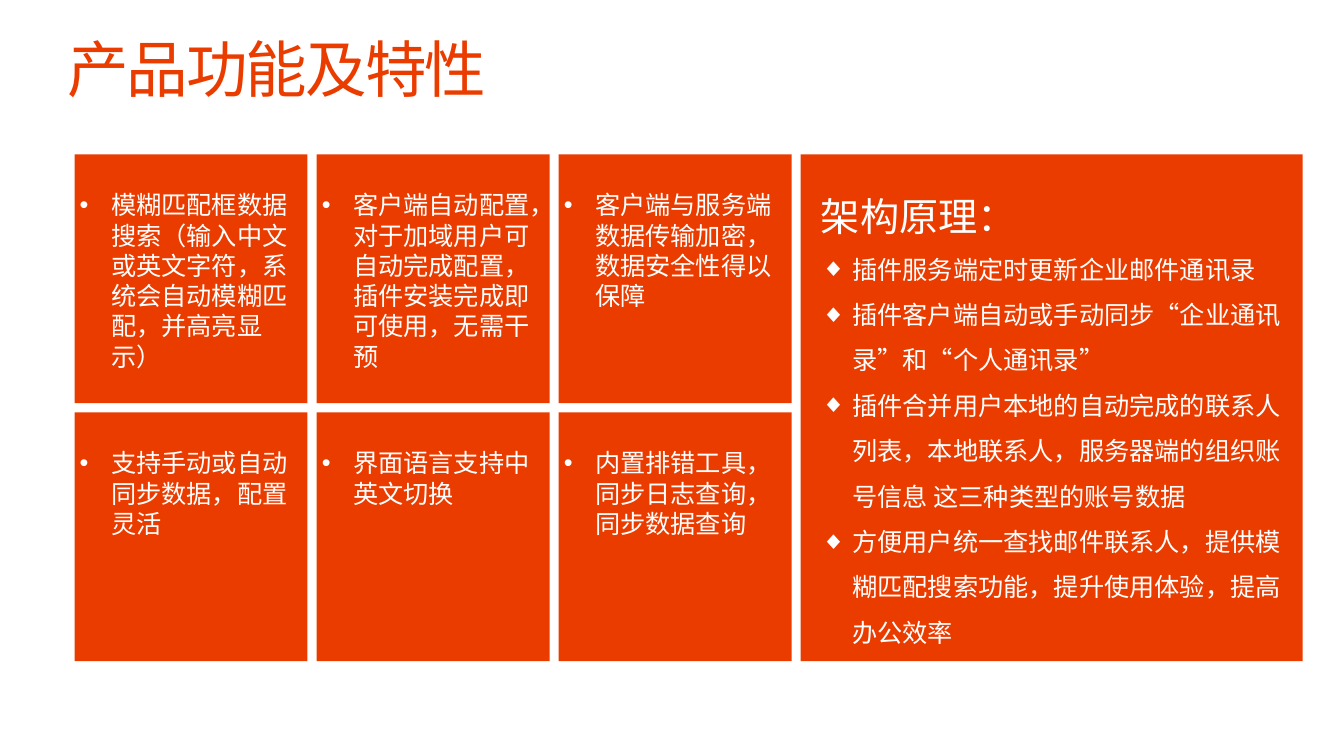
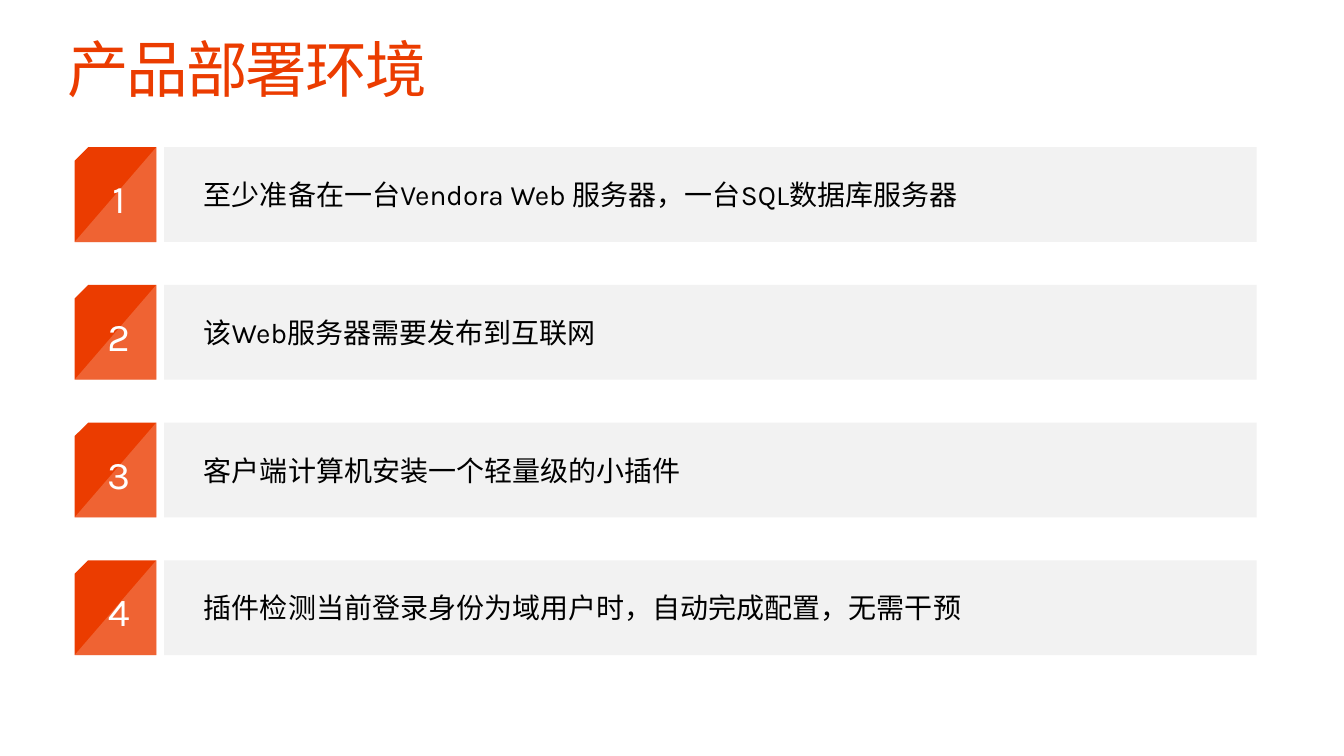
from lxml import etree
from pptx import Presentation
from pptx import util as u
from pptx.dml.color import RGBColor
from pptx.enum import shapes, text
from pptx.oxml.ns import qn

FONT = "Karla"
COLORS = {"accent": "EB3C00", "bar": "F2F2F2", "white": "FFFFFF", "black": "000000"}

FEATURES_TITLE = ("产品功能及特性", 11.73)
FEATURES = [
    "模糊匹配框数据搜索（输入中文或英文字符，系统会自动模糊匹配，并高亮显示）",
    "客户端自动配置，对于加域用户可自动完成配置，插件安装完成即可使用，无需干预",
    "客户端与服务端数据传输加密，数据安全性得以保障",
    "支持手动或自动同步数据，配置灵活",
    "界面语言支持中英文切换",
    "内置排错工具，同步日志查询，同步数据查询",
]
PRINCIPLE_HEADING = "架构原理："
PRINCIPLES = [
    "插件服务端定时更新企业邮件通讯录",
    "插件客户端自动或手动同步“企业通讯录”和“个人通讯录”",
    "插件合并用户本地的自动完成的联系人列表，本地联系人，服务器端的组织账号信息 这三种类型的账号数据",
    "方便用户统一查找邮件联系人，提供模糊匹配搜索功能，提升使用体验，提高办公效率",
]
STEPS_TITLE = ("产品部署环境", 10.82)
STEPS = [
    "至少准备在一台Vendora Web 服务器，一台SQL数据库服务器",
    "该Web服务器需要发布到互联网",
    "客户端计算机安装一个轻量级的小插件",
    "插件检测当前登录身份为域用户时，自动完成配置，无需干预",
]

# Lengths in centimetres
LEFT = 1.88
TILE_TOP, TILE_W, TILE_H, TILE_GAP = 3.89, 5.87, 6.27, 0.23
TILE_COLUMNS = 3
PANEL_W = 12.65
STEP_TOP, STEP_H, STEP_PITCH = 3.71, 2.39, 3.47
NUMBER_W, BAR_LEFT, BAR_W = 2.06, 4.14, 27.53
INDENT = 0.79

TILE_FRAME = {"margin_left": u.Cm(0.13), "margin_top": u.Cm(0.89),
              "margin_right": u.Cm(0.13), "margin_bottom": u.Cm(0.13),
              "vertical_anchor": text.MSO_ANCHOR.TOP}
PANEL_FRAME = {"margin_left": u.Cm(0.51), "margin_right": u.Cm(0.51),
               "vertical_anchor": text.MSO_ANCHOR.MIDDLE}
NUMBER_FRAME = {"vertical_anchor": text.MSO_ANCHOR.MIDDLE}
BAR_FRAME = {"margin_left": u.Cm(1), "vertical_anchor": text.MSO_ANCHOR.MIDDLE}


def set_attributes(target, values):
    for name, value in values.items():
        setattr(target, name, value)


def add_block(holder, kind, place, color, frame=None, flip=False):
    block = holder.shapes.add_shape(kind, *map(u.Cm, place))
    block.shadow.inherit = False
    block.fill.solid()
    block.fill.fore_color.rgb = RGBColor.from_string(COLORS[color])
    block.line.fill.background()
    if flip:
        block._element.spPr.get_or_add_xfrm().set("flipH", "1")
    set_attributes(block.text_frame, {"word_wrap": True, **(frame or {})})
    return block


def write(para, words, size, color, bullet=None, **layout):
    set_attributes(para, {"alignment": text.PP_ALIGN.LEFT, **layout})
    span = para.add_run()
    span.text = words
    set_attributes(span.font, {"name": FONT, "size": u.Pt(size)})
    span.font.color.rgb = RGBColor.from_string(COLORS[color])
    if bullet:
        properties = para._p.get_or_add_pPr()
        properties.set("marL", str(u.Cm(INDENT)))
        properties.set("indent", str(-u.Cm(INDENT)))
        etree.SubElement(properties, qn("a:buFont"), typeface="Arial")
        etree.SubElement(properties, qn("a:buChar"), char=bullet)
    return span


def add_titled_slide(deck, title, width):
    slide = deck.slides.add_slide(deck.slide_layouts[6])
    box = slide.shapes.add_textbox(*map(u.Cm, (1.45, 0.86, width, 1.96)))
    set_attributes(box.text_frame, {"word_wrap": True,
                                    "auto_size": text.MSO_AUTO_SIZE.SHAPE_TO_FIT_TEXT})
    span = write(box.text_frame.paragraphs[0], title, 44, "accent", line_spacing=0.9)
    span._r.get_or_add_rPr().set("spc", "-150")
    return slide


def build_features(deck):
    slide = add_titled_slide(deck, *FEATURES_TITLE)
    rectangle = shapes.MSO_SHAPE.RECTANGLE
    for index, feature in enumerate(FEATURES):
        row, column = divmod(index, TILE_COLUMNS)
        place = (LEFT + column * (TILE_W + TILE_GAP),
                 TILE_TOP + row * (TILE_H + TILE_GAP), TILE_W, TILE_H)
        tile = add_block(slide, rectangle, place, "accent", TILE_FRAME)
        write(tile.text_frame.paragraphs[0], feature, 18, "white", "•")

    panel_left = LEFT + TILE_COLUMNS * (TILE_W + TILE_GAP)
    place = (panel_left, TILE_TOP, PANEL_W, 2 * TILE_H + TILE_GAP)
    frame = add_block(slide, rectangle, place, "accent", PANEL_FRAME).text_frame
    write(frame.paragraphs[0], PRINCIPLE_HEADING, 28, "white", line_spacing=1.5)
    for principle in PRINCIPLES:
        write(frame.add_paragraph(), principle, 18, "white", "◆", line_spacing=1.5)


def build_steps(deck):
    slide = add_titled_slide(deck, *STEPS_TITLE)
    for index, step in enumerate(STEPS):
        group = slide.shapes.add_group_shape()
        top = STEP_TOP + index * STEP_PITCH
        number_place = (LEFT, top, NUMBER_W, STEP_H)
        number = add_block(group, shapes.MSO_SHAPE.SNIP_1_RECTANGLE, number_place,
                           "accent", NUMBER_FRAME, flip=True)
        write(number.text_frame.paragraphs[0], str(index + 1), 28, "white",
              alignment=text.PP_ALIGN.CENTER)
        bar = add_block(group, shapes.MSO_SHAPE.RECTANGLE,
                        (BAR_LEFT, top, BAR_W, STEP_H), "bar", BAR_FRAME)
        write(bar.text_frame.paragraphs[0], step, 20, "black")
        shine = add_block(group, shapes.MSO_SHAPE.RIGHT_TRIANGLE, number_place,
                          "white", flip=True)
        shade = shine._element.spPr.find(qn("a:solidFill"))[0]
        etree.SubElement(shade, qn("a:alpha"), val="20000")


def main():
    deck = Presentation()
    set_attributes(deck, {"slide_width": u.Cm(33.87), "slide_height": u.Cm(19.05)})
    build_features(deck)
    build_steps(deck)
    deck.save("out.pptx")


if __name__ == "__main__":
    main()
